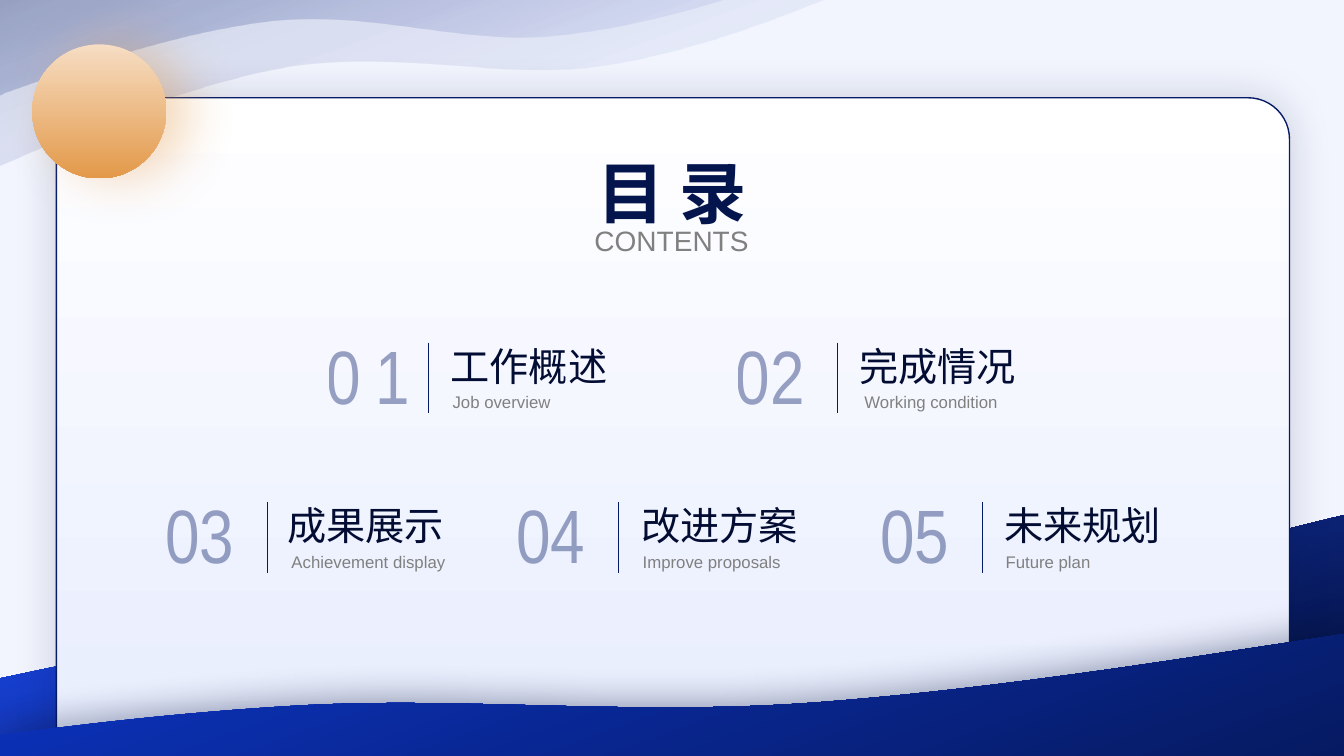
from pptx import Presentation
from pptx.dml.color import RGBColor
from pptx.enum.shapes import MSO_CONNECTOR, MSO_SHAPE
from pptx.enum.text import MSO_ANCHOR, MSO_AUTO_SIZE, PP_ALIGN
from pptx.oxml.ns import qn
from pptx.util import Inches, Pt
from lxml import etree

CENTER, LEFT = PP_ALIGN.CENTER, PP_ALIGN.LEFT
TOP, MIDDLE = MSO_ANCHOR.TOP, MSO_ANCHOR.MIDDLE
NO_FIT = MSO_AUTO_SIZE.NONE
STRAIGHT = MSO_CONNECTOR.STRAIGHT
RECTANGLE, OVAL = MSO_SHAPE.RECTANGLE, MSO_SHAPE.OVAL
ROUND_TOP = MSO_SHAPE.ROUND_2_SAME_RECTANGLE

TITLE_ONLY = 5
WIDTH, HEIGHT = 13.33, 7.5
CJK, LATIN, NARROW = "Noto Sans CJK SC", "Arial", "Arial Narrow"
COLORS = {
    "sky": "B3C3FB", "blue": "0B30B6", "navy": "06195F",
    "bright": "1B4AF2", "night": "030D33", "front": "0C34C5",
    "front_end": "061A61", "white": "FFFFFF", "card": "E8EDFE",
    "line": "061B66", "peach": "F6DDC3", "orange": "E39949",
    "title": "04144D", "grey": "808080",
}

# Wave crests: a start point, then three points for each Bézier curve
UPPER_CREST = [(8.08, 0.04), (7.43, 0.3), (6.77, 0.52), (6.08, 0.64),
               (4.98, 0.83), (3.88, 0.45), (2.67, 0.7),
               (1.91, 0.86), (1.12, 1.16), (0.3, 1.51)]
INNER_CREST = [(6.93, 0.08), (6.47, 0.21), (6, 0.31), (5.52, 0.36),
               (4.56, 0.46), (3.63, 0.08), (2.58, 0.23),
               (1.79, 0.34), (0.93, 0.61), (0.06, 0.92)]
LOWER_CREST = [(0.47, 6.63), (1.26, 6.47), (2.07, 6.34), (2.9, 6.26),
               (4.55, 6.1), (6.22, 6.42), (8.04, 6.21),
               (9.41, 6.05), (10.87, 5.72), (12.35, 5.35)]
BACK_TOP, FRONT_TOP, FLATTEN = 5.11, 6.29, 0.62

# Row top, divider x, indent, number spans, heading, caption, caption width
TOPICS = [
    (3.4, 4.25, 0.22, [("0", 54), (" ", 44), ("1", 54)], "工作概述", "Job overview", 1.01),
    (3.4, 8.31, 0.21, [("02", 54)], "完成情况", "Working condition", 1.43),
    (4.98, 2.65, 0.2, [("03", 54)], "成果展示", "Achievement display", 1.61),
    (4.98, 9.74, 0.22, [("05", 54)], "未来规划", "Future plan", 0.87),
    (4.98, 6.13, 0.23, [("04", 54)], "改进方案", "Improve proposals", 1.4),
]


def rgb(name):
    return RGBColor.from_string(COLORS[name])


def set_alphas(shape, alphas):
    for color, alpha in zip(shape.element.iter(qn("a:srgbClr")), alphas):
        etree.SubElement(color, qn("a:alpha"), val=str(alpha * 1000))


def paint_gradient(fill, first, last, angle, start=0):
    """Two-colour gradient; the angle runs clockwise from the right."""
    fill.gradient()
    fill.gradient_angle = 360 - angle
    for stop, name, position in zip(fill.gradient_stops, (first, last), (start, 1)):
        stop.color.rgb = rgb(name)
        stop.position = position


def add_shadow(shape, name, alpha, blur, distance=0, direction=0):
    effects = shape.element.spPr.find(qn("a:effectLst"))
    shadow = etree.SubElement(
        effects, qn("a:outerShdw"), blurRad=str(Pt(blur)), dist=str(Pt(distance)),
        dir=str(direction * 60000), algn="ctr", rotWithShape="0")
    color = etree.SubElement(shadow, qn("a:srgbClr"), val=COLORS[name])
    etree.SubElement(color, qn("a:alpha"), val=str(alpha * 1000))


def add_plain_shape(page, kind, left, top, width, height):
    shape = page.shapes.add_shape(
        kind, Inches(left), Inches(top), Inches(width), Inches(height))
    shape.shadow.inherit = False
    shape.line.fill.background()
    return shape


def bend_crest(wave, first, count):
    """Turn each three line segments of the crest into one Bézier curve."""
    segments = list(wave.element.iter(qn("a:lnTo")))[first:first + count]
    for i in range(0, count, 3):
        curve = etree.Element(qn("a:cubicBezTo"))
        segments[i].addprevious(curve)
        for segment in segments[i:i + 3]:
            curve.append(segment[0])
            segment.getparent().remove(segment)


def add_wave(page, before, crest, after, colors, angle, start=0.04):
    outline = [(Inches(x), Inches(y)) for x, y in before + crest + after]
    builder = page.shapes.build_freeform(*outline[0], scale=1.0)
    builder.add_line_segments(outline[1:], close=True)
    wave = builder.convert_to_shape()
    bend_crest(wave, len(before), len(crest) - 1)
    wave.shadow.inherit = False
    wave.line.fill.background()
    paint_gradient(wave.fill, *colors, angle, start)
    return wave


def add_lower_wave(page, top, scale, colors, start=0.04):
    def place(points):
        return [(x, top + (y - BACK_TOP) * scale) for x, y in points]

    before = [(WIDTH, top), (WIDTH, HEIGHT), (0, HEIGHT)] + place([(0, 6.73)])
    return add_wave(page, before, place(LOWER_CREST), [], colors, 70, start)


def format_frame(frame, anchor, wrap):
    frame.margin_left = frame.margin_right = frame.margin_top = frame.margin_bottom = 0
    frame.vertical_anchor = anchor
    frame.auto_size = NO_FIT
    frame.word_wrap = wrap


def add_span(para, text, size, font, color=None):
    span = para.add_run()
    span.text = text
    span.font.size = Pt(size)
    span.font.name = font
    if color:
        span.font.color.rgb = rgb(color)
    if font == CJK:
        etree.SubElement(span.font._element, qn("a:ea"), typeface=font)
    return span


def add_label(page, left, top, width, height, spans, font, color,
              align=LEFT, anchor=MIDDLE, wrap=True):
    box = page.shapes.add_textbox(
        Inches(left), Inches(top), Inches(width), Inches(height))
    format_frame(box.text_frame, anchor, wrap)
    para = box.text_frame.paragraphs[0]
    para.alignment = align
    for text, size in spans:
        add_span(para, text, size, font, color)
    return box


def add_topic(page, top, x, indent, number, heading, caption, caption_width):
    box = add_label(page, x - 1.01, top - 0.08, 0.8, 0.87, number, NARROW, "line",
                    anchor=TOP, wrap=False)
    box.text_frame.paragraphs[0].line_spacing = 0.96
    set_alphas(box, [40] * len(number))
    if len(number) > 1:
        for span in box.text_frame.paragraphs[0].runs:
            span.font._element.set("spc", "-150")
    divider = page.shapes.add_connector(
        STRAIGHT, Inches(x), Inches(top), Inches(x), Inches(top + 0.7))
    divider.line.color.rgb = rgb("line")
    divider.line.width = Pt(0.75)
    etree.SubElement(divider.element.spPr, qn("a:effectLst"))
    add_label(page, x + indent, top - 0.01, 1.57, 0.47, [(heading, 28)],
              CJK, "night", wrap=False)
    add_label(page, x + indent, top + 0.49, caption_width, 0.2, [(caption, 12)],
              LATIN, "grey", align=CENTER)


def add_backdrop(page):
    sky = add_plain_shape(page, RECTANGLE, 0, 0, WIDTH, HEIGHT)
    sky.fill.solid()
    sky.fill.fore_color.rgb = rgb("sky")
    set_alphas(sky, [16])
    # Pale waves at the top
    for right, crest, bottom, alpha in ((8.18, UPPER_CREST, 1.64, 15),
                                        (7.2, INNER_CREST, 0.95, 27)):
        wave = add_wave(page, [(0, 0), (right, 0)], crest, [(0, bottom)],
                        ("blue", "navy"), 250)
        set_alphas(wave, [0, alpha])
    # Card between the dark waves
    for colors in (("blue", "navy"), ("bright", "night")):
        add_lower_wave(page, BACK_TOP, 1, colors)
    card = add_plain_shape(page, ROUND_TOP, 0.56, 0.97, 12.23, 6.53)
    card.adjustments[0], card.adjustments[1] = 0.063, 0
    paint_gradient(card.fill, "white", "card", 90)
    card.line.color.rgb = rgb("line")
    card.line.width = Pt(1)
    add_shadow(card, "night", 16, 30)
    front = add_lower_wave(page, FRONT_TOP, FLATTEN, ("front", "front_end"), 0)
    add_shadow(front, "night", 40, 27, 3, 270)
    # Orange ball
    ball = add_plain_shape(page, OVAL, 0.32, 0.44, 1.33, 1.33)
    paint_gradient(ball.fill, "peach", "orange", 90)
    add_shadow(ball, "orange", 38, 38, 15)


def add_title(page):
    title = page.shapes.title
    title.left, title.top = Inches(5.88), Inches(1.5)
    title.width, title.height = Inches(1.57), Inches(0.81)
    format_frame(title.text_frame, MIDDLE, True)
    para = title.text_frame.paragraphs[0]
    para.alignment = CENTER
    para.space_after = Pt(3)
    span = add_span(para, "目 录", 48, CJK)
    span.font.bold = True
    paint_gradient(span.font.fill, "title", "night", 90)
    title.element.getparent().append(title.element)  # bring to front


def main():
    deck = Presentation()
    deck.slide_width, deck.slide_height = Inches(WIDTH), Inches(HEIGHT)
    page = deck.slides.add_slide(deck.slide_layouts[TITLE_ONLY])
    add_backdrop(page)
    for topic in TOPICS:
        add_topic(page, *topic)
    add_title(page)
    add_label(page, 5.8, 2.22, 1.72, 0.34, [("CONTENTS", 20)], LATIN, "grey",
              align=CENTER, anchor=TOP)
    deck.save("out.pptx")


if __name__ == "__main__":
    main()
